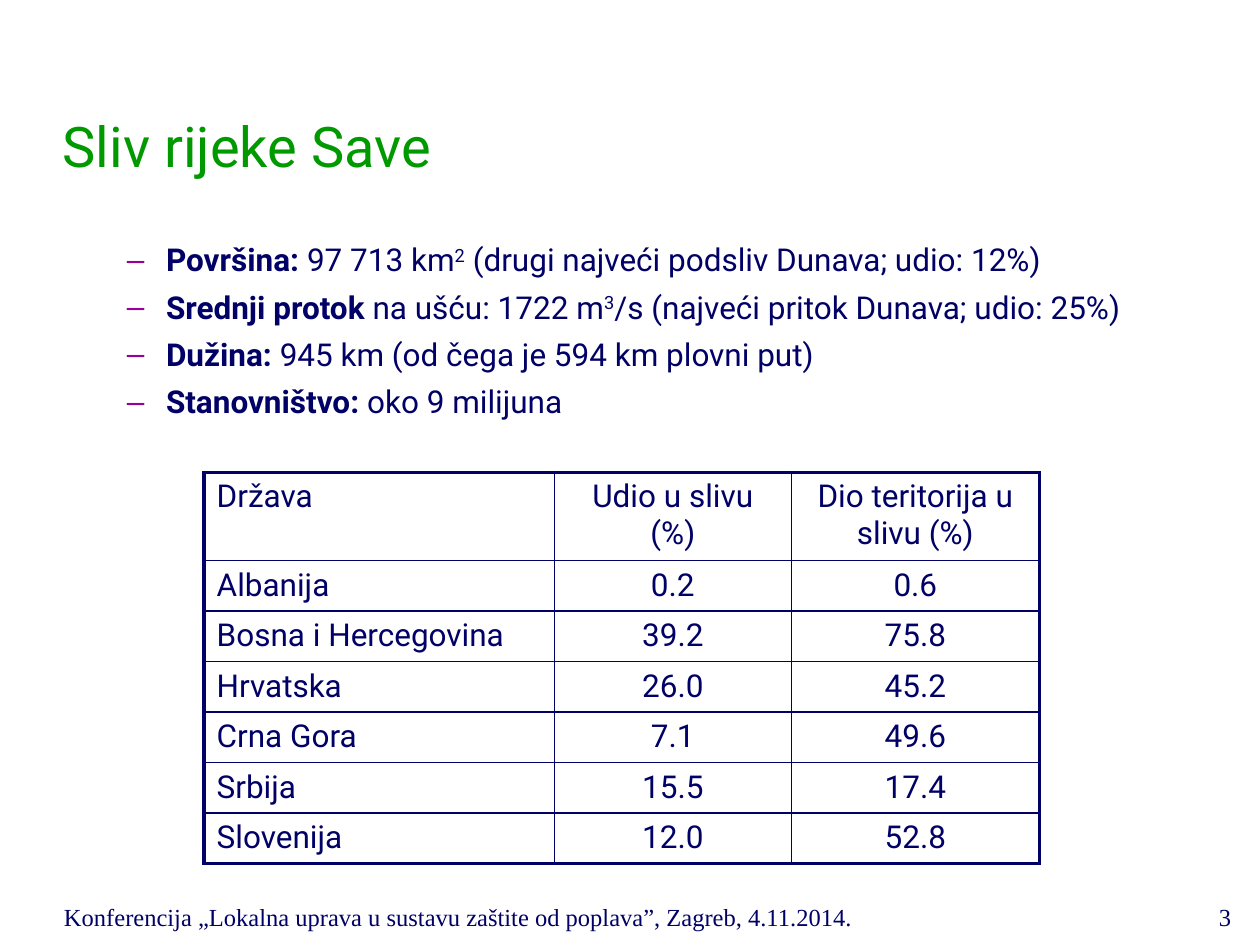
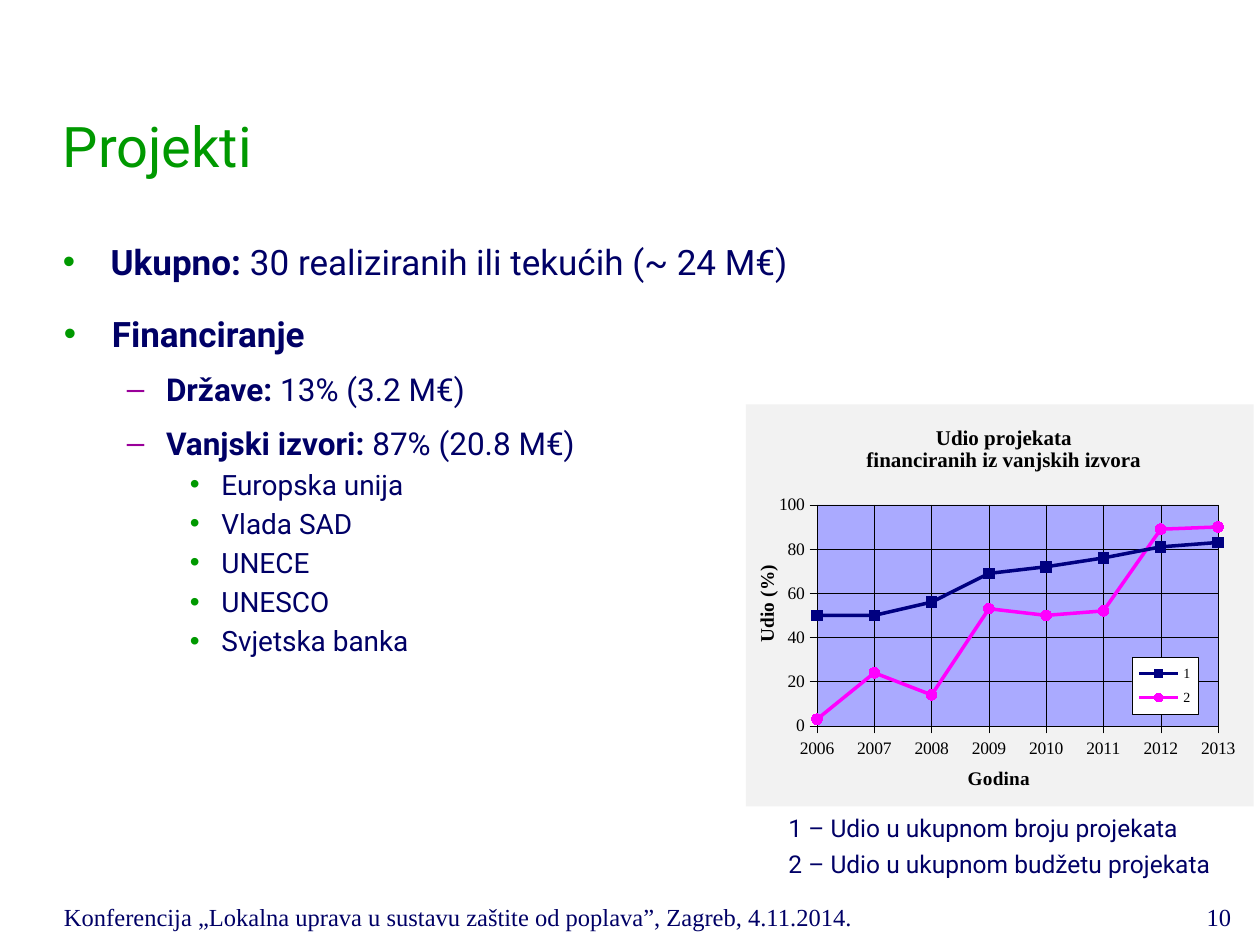
"""Build two slides on the Sava river basin: basin facts with a table, and projects with a chart."""
from lxml import etree
from pptx import Presentation
from pptx import util as u
from pptx.chart import data as chart_data
from pptx.dml.color import RGBColor
from pptx.enum import chart as chart_enum, text
from pptx.oxml import parse_xml
from pptx.oxml.ns import nsdecls, qn

COLORS = {
    "navy": "000066", "green": "009900", "purple": "990099", "white": "FFFFFF", "black": "000000",
    "panel": "F2F2F2", "plot": "AAAAFF", "count": "000080", "budget": "FF00FF",
}
SANS, SERIF, BULLET_FONT = "Roboto", "Times New Roman", "Arial"
FOOTER = "Konferencija „Lokalna uprava u sustavu zaštite od poplava”, Zagreb, 4.11.2014."
LEFT, RIGHT, CENTER = text.PP_ALIGN.LEFT, text.PP_ALIGN.RIGHT, text.PP_ALIGN.CENTER
TOP, MIDDLE, BOTTOM = text.MSO_ANCHOR.TOP, text.MSO_ANCHOR.MIDDLE, text.MSO_ANCHOR.BOTTOM

STYLES = {
    "title": {"size": 32, "color": "green"},
    "footer": {"size": 14, "font": SERIF},
    "number": {"size": 14, "font": SERIF, "align": RIGHT},
    "caption": {"size": 14},
    "name cell": {"size": 18},
    "value cell": {"size": 18, "align": CENTER},
    "topic": {"size": 20, "bullet": ("•", "green", 0.38, 0.38)},
    "fact": {"size": 18, "bullet": ("–", "purple", 0.81, 0.31), "space": 5.4},
    "source": {"size": 18, "bullet": ("–", "purple", 0.81, 0.31), "space": 9},
    "donor": {"size": 16, "bullet": ("•", "green", 1.25, 0.25), "space": 3.2},
}


def write(frame, paragraphs, anchor=TOP):
    frame.word_wrap = True
    frame.vertical_anchor = anchor
    for index, (style_name, runs) in enumerate(paragraphs):
        style = STYLES[style_name]
        paragraph = frame.paragraphs[0] if index == 0 else frame.add_paragraph()
        paragraph.alignment = style.get("align", LEFT)
        if "bullet" in style:
            character, color, indent, hang = style["bullet"]
            properties = paragraph._p.get_or_add_pPr()
            properties.set("marL", str(u.Inches(indent)))
            properties.set("indent", str(-u.Inches(hang)))
            bullet_color = etree.SubElement(properties, qn("a:buClr"))
            etree.SubElement(bullet_color, qn("a:srgbClr"), val=COLORS[color])
            etree.SubElement(properties, qn("a:buFont"), typeface=BULLET_FONT)
            etree.SubElement(properties, qn("a:buChar"), char=character)
        if index:
            paragraph.space_before = u.Pt(style.get("space", 0))
        for content, mark in runs:
            run = paragraph.add_run()
            run.text = content
            run.font.name = style.get("font", SANS)
            run.font.size = u.Pt(style["size"])
            run.font.bold = mark == "bold"
            run.font.color.rgb = RGBColor.from_string(COLORS[style.get("color", "navy")])
            if mark == "super":
                run._r.get_or_add_rPr().set("baseline", "30000")


def place(parent, after, x, y, width=None, height=None):
    for old_layout in parent.findall(qn("c:layout")):
        parent.remove(old_layout)
    layout = etree.Element(qn("c:layout"))
    manual = etree.SubElement(layout, qn("c:manualLayout"))
    settings = [("xMode", "edge"), ("yMode", "edge"), ("x", x), ("y", y), ("w", width), ("h", height)]
    if after is None:
        settings.insert(0, ("layoutTarget", "inner"))
    for tag, value in settings:
        if value is not None:
            etree.SubElement(manual, qn(f"c:{tag}"), val=str(value))
    parent.insert(0 if after is None else parent.index(parent.find(qn(after))) + 1, layout)


presentation = Presentation()
presentation.slide_width, presentation.slide_height = u.Inches(10), u.Inches(7.5)

basin_facts = [
    ("fact", [("Površina: ", "bold"), ("97 713 km", ""), ("2", "super"),
              (" (drugi najveći podsliv Dunava; udio: 12%)", "")]),
    ("fact", [("Srednji protok ", "bold"), ("na ušću: 1722 m", ""), ("3", "super"),
              ("/s (najveći pritok Dunava; udio: 25%)", "")]),
    ("fact", [("Dužina:", "bold"), (" 945 km (od čega je 594 km plovni put)", "")]),
    ("fact", [("Stanovništvo:", "bold"), (" oko 9 milijuna", "")]),
]
funding = [
    ("topic", [("Financiranje", "bold")]),
    ("source", [("Države:", "bold"), (" 13% (3.2 M€)", "")]),
    ("source", [("Vanjski izvori:", "bold"), (" 87% (20.8 M€)", "")]),
]
for donor in ("Europska unija", "Vlada SAD", "UNECE", "UNESCO", "Svjetska banka"):
    funding.append(("donor", [(donor, "")]))
total = [("topic", [("Ukupno: ", "bold"), ("30 realiziranih ili tekućih (~ 24 M€)", "")])]
captions = [[("caption", [(line, "")])] for line in
            ("1 – Udio u ukupnom broju projekata", "2 – Udio u ukupnom budžetu projekata")]

pages = [
    ("Sliv rijeke Save", "3", [((0.41, 1.86, 9.26, 1.97), basin_facts)]),
    ("Projekti", "10", [
        ((0.41, 2.43, 5.34, 4.4), funding),
        ((6.16, 6.4, 3.76, 0.44), captions[0]),
        ((6.16, 6.69, 3.76, 0.44), captions[1]),
        ((0.4, 1.86, 9.18, 0.64), total),
    ]),
]
slides = []
for title, number, blocks in pages:
    slide = presentation.slides.add_slide(presentation.slide_layouts[6])
    slides.append(slide)
    boxes = [
        ((9.13, 7.16, 0.74, 0.28), [("number", [(number, "")])], BOTTOM),
        ((0.4, 0.66, 7.64, 0.99), [("title", [(title, "")])], MIDDLE),
        *[(position, paragraphs, TOP) for position, paragraphs in blocks],
        ((0.41, 7.18, 7.97, 0.26), [("footer", [(FOOTER, "")])], BOTTOM),
    ]
    for position, paragraphs, anchor in boxes:
        shape = slide.shapes.add_textbox(*map(u.Inches, position))
        write(shape.text_frame, paragraphs, anchor)

basin_slide, projects_slide = slides

countries = [
    ("Država", "Udio u slivu (%)", "Dio teritorija u slivu (%)"),
    ("Albanija", "0.2", "0.6"),
    ("Bosna i Hercegovina", "39.2", "75.8"),
    ("Hrvatska", "26.0", "45.2"),
    ("Crna Gora", "7.1", "49.6"),
    ("Srbija", "15.5", "17.4"),
    ("Slovenija", "12.0", "52.8"),
]
last_row, last_column = len(countries) - 1, 2
table = basin_slide.shapes.add_table(
    len(countries), 3, u.Inches(1.62), u.Inches(3.75), u.Inches(6.63), u.Inches(3.1)).table
table.first_row = table.horz_banding = False
for column, width in zip(table.columns, (2.78, 1.88, 1.97)):
    column.width = u.Inches(width)
for row_index, values in enumerate(countries):
    table.rows[row_index].height = u.Inches(0.4 if row_index else 0.7)
    for column_index, value in enumerate(values):
        cell = table.cell(row_index, column_index)
        cell.fill.background()
        write(cell.text_frame, [("value cell" if column_index else "name cell", [(value, "")])])
        outer_sides = {"lnL": column_index == 0, "lnR": column_index == last_column,
                       "lnT": row_index == 0, "lnB": row_index == last_row}
        for order, (side, is_outer) in enumerate(outer_sides.items()):
            cell._tc.get_or_add_tcPr().insert(order, parse_xml(
                f'<a:{side} {nsdecls("a")} w="{u.Pt(2.25 if is_outer else 1)}"><a:solidFill>'
                f'<a:srgbClr val="{COLORS["navy"]}"/></a:solidFill></a:{side}>'))

years = range(2006, 2014)
shares = {
    "1": ("count", chart_enum.XL_MARKER_STYLE.SQUARE, (50, 50, 56, 69, 72, 76, 81, 83)),
    "2": ("budget", chart_enum.XL_MARKER_STYLE.CIRCLE, (3, 24, 14, 53, 50, 52, 89, 90)),
}
share_data = chart_data.XyChartData()
for name, (color, marker, values) in shares.items():
    share_series = share_data.add_series(name)
    for year, value in zip(years, values):
        share_series.add_data_point(year, value)
chart = projects_slide.shapes.add_chart(
    chart_enum.XL_CHART_TYPE.XY_SCATTER_LINES, u.Inches(5.92), u.Inches(3.21),
    u.Inches(4.03), u.Inches(3.19), share_data).chart
black = RGBColor.from_string(COLORS["black"])
chart.font.name, chart.font.size = SERIF, u.Pt(10)
chart.font.color.rgb = black

for series, (color, marker, values) in zip(chart.plots[0].series, shares.values()):
    series_color = RGBColor.from_string(COLORS[color])
    series.smooth = False
    series.format.line.color.rgb = series_color
    series.format.line.width = u.Pt(2)
    series.marker.style, series.marker.size = marker, 6
    series.marker.format.fill.solid()
    series.marker.format.fill.fore_color.rgb = series_color
    series.marker.format.line.color.rgb = series_color

year_axis, share_axis = chart.category_axis, chart.value_axis
for axis, low, high, step in ((year_axis, 2006, 2013, 1), (share_axis, 0, 100, 20)):
    axis.minimum_scale, axis.maximum_scale, axis.major_unit = low, high, step
    axis.major_tick_mark = chart_enum.XL_TICK_MARK.OUTSIDE
    axis.minor_tick_mark = chart_enum.XL_TICK_MARK.NONE
    axis.has_major_gridlines = True
    axis.tick_labels.number_format, axis.tick_labels.number_format_is_linked = "0", False
    axis.tick_labels.font.size, axis.tick_labels.font.name = u.Pt(10), SERIF
    for line in (axis.format.line, axis.major_gridlines.format.line):
        line.color.rgb, line.width = black, u.Pt(0.25)

chart.has_title = True
for heading, lines, size, x, y in (
        (chart.chart_title, ("Udio projekata", "financiranih iz vanjskih izvora"), 12, 0.23, 0.04),
        (year_axis.axis_title, ("Godina",), 11, 0.43, 0.89),
        (share_axis.axis_title, ("Udio (%)",), 11, 0.01, 0.39)):
    frame = heading.text_frame
    for index, line in enumerate(lines):
        paragraph = frame.paragraphs[0] if index == 0 else frame.add_paragraph()
        paragraph.alignment = CENTER
        run = paragraph.add_run()
        run.text = line
        run.font.name, run.font.size, run.font.bold = SERIF, u.Pt(size), True
        run.font.color.rgb = black
    place(heading._element, "c:tx", x, y)
share_axis.axis_title.text_frame._txBody.find(qn("a:bodyPr")).set("rot", "-5400000")

chart.has_legend = True
chart.legend.position = chart_enum.XL_LEGEND_POSITION.RIGHT
chart.legend.include_in_layout = False
chart.legend.font.size, chart.legend.font.name = u.Pt(8), SERIF
legend = chart.legend._element
place(legend, "c:legendPos", 0.76, 0.63, 0.13, 0.14)

chart_space = chart._chartSpace
plot_area = chart_space.find(".//" + qn("c:plotArea"))
place(plot_area, None, 0.14, 0.25, 0.79, 0.55)
for previous, fill, outline in (
        (chart_space.find(qn("c:chart")), "panel", "<a:noFill/>"),
        (plot_area[-1], "plot", "<a:noFill/>"),
        (legend.find(qn("c:overlay")), "white",
         f'<a:solidFill><a:srgbClr val="{COLORS["black"]}"/></a:solidFill>')):
    previous.addnext(parse_xml(
        f'<c:spPr {nsdecls("c", "a")}><a:solidFill><a:srgbClr val="{COLORS[fill]}"/></a:solidFill>'
        f'<a:ln w="{u.Pt(0.25)}">{outline}</a:ln></c:spPr>'))

presentation.save("out.pptx")
